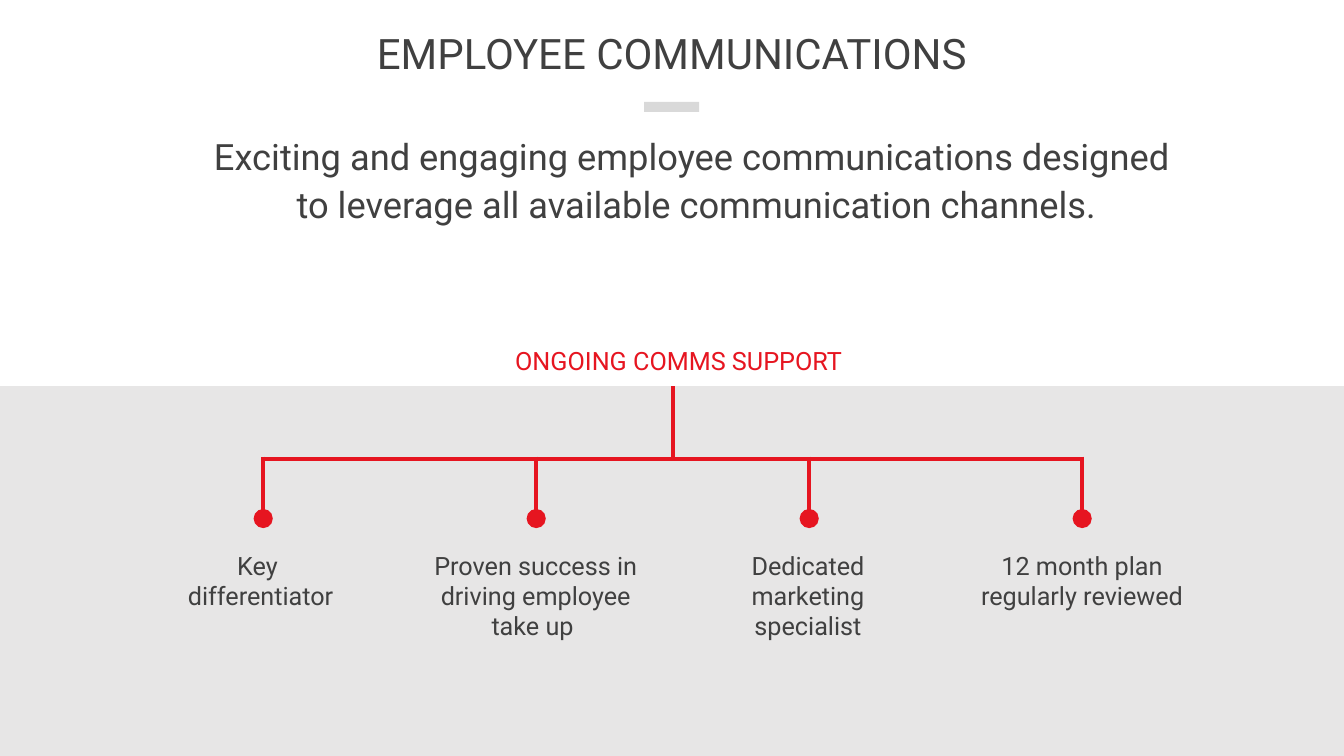
"""Build the employee communications slide."""
from lxml.etree import SubElement
from pptx import Presentation
from pptx.dml.color import RGBColor
from pptx.enum.shapes import MSO_CONNECTOR, MSO_SHAPE
from pptx.enum.text import MSO_ANCHOR, MSO_AUTO_SIZE, PP_ALIGN
from pptx.oxml.ns import qn
from pptx.util import Pt

RED = RGBColor(0xE6, 0x15, 0x20)
DARK = RGBColor(0x40, 0x40, 0x40)
PALE = RGBColor(0xE7, 0xE6, 0xE6)
GREY = RGBColor(0xD9, 0xD9, 0xD9)

FONT = "Roboto"
TITLE = {"line_spacing": 0.8, "space_before": Pt(0)}
BODY = {"line_spacing": 0.8, "space_before": Pt(10)}
BAND_TOP = 275.8
TRUNK_X = 481
BRANCH_Y = 327.6
DOT_Y = 370.4
DOT_SIZE = 13.7
FIRST_X, STEP_X = 188, 195
BRANCHES = [
    (103, 51, "Key \ndifferentiator"),
    (299.5, 73, "Proven success in driving employee take up "),
    (494, 73, "Dedicated marketing specialist"),
    (689.75, 51, "12 month plan regularly reviewed"),
]


def set_attrs(obj, values):
    """Set every attribute in values on obj."""
    for name, value in values.items():
        setattr(obj, name, value)


def place(sp, left, top, width, height):
    """Move and size a shape, in points."""
    set_attrs(sp, {"left": Pt(left), "top": Pt(top),
                   "width": Pt(width), "height": Pt(height)})


def write(sp, lines, size, color, para=None, anchor=MSO_ANCHOR.TOP):
    """Fill a text frame with centred paragraphs."""
    tf = sp.text_frame
    set_attrs(tf, {"word_wrap": True, "auto_size": MSO_AUTO_SIZE.NONE,
                   "vertical_anchor": anchor})
    for i, line in enumerate(lines):
        p = tf.add_paragraph() if i else tf.paragraphs[0]
        p.text = line
        set_attrs(p, {"alignment": PP_ALIGN.CENTER, **(para or {})})
        for r in p.runs:
            set_attrs(r.font, {"name": FONT, "size": Pt(size)})
            r.font.color.rgb = color


def clear_bullets(sp):
    """Remove bullets and indents from a placeholder."""
    for p in sp.text_frame.paragraphs:
        pPr = p._p.get_or_add_pPr()
        pPr.set("marL", "0")
        pPr.set("indent", "0")
        SubElement(pPr, qn("a:buNone"))


def add_label(slide, box, text, color):
    """Add a centred text box."""
    sp = slide.shapes.add_textbox(*map(Pt, box))
    write(sp, [text], 18, color)


def add_block(slide, kind, box, color):
    """Add a flat filled shape."""
    sp = slide.shapes.add_shape(kind, *map(Pt, box))
    sp.shadow.inherit = False
    sp.fill.solid()
    sp.fill.fore_color.rgb = color
    sp.line.fill.background()


def add_line(slide, *ends):
    """Add a red line between two points."""
    line = slide.shapes.add_connector(MSO_CONNECTOR.STRAIGHT, *map(Pt, ends))
    line.line.color.rgb = RED
    line.line.width = Pt(3)
    SubElement(line._element.spPr, qn("a:effectLst"))


def add_branch(slide, x, left, height, text):
    """Add a drop line with its dot and caption."""
    add_line(slide, x, BRANCH_Y - 1.5, x, DOT_Y - 6)
    corner = DOT_SIZE / 2
    add_block(slide, MSO_SHAPE.OVAL,
              (x - corner, DOT_Y - corner, DOT_SIZE, DOT_SIZE), RED)
    add_label(slide, (left, 389.5, 166.3, height), text, DARK)


def main():
    """Build and save the slide."""
    prs = Presentation()
    set_attrs(prs, {"slide_width": Pt(960), "slide_height": Pt(540)})
    slide = prs.slides.add_slide(prs.slide_layouts[1])

    title, body = slide.placeholders
    place(title, 0, 0, 960, 82)
    write(title, ["EMPLOYEE COMMUNICATIONS"], 30, DARK, TITLE,
          MSO_ANCHOR.MIDDLE)
    place(body, 103, 98, 789, 67.7)
    write(body, ["Exciting and engaging employee communications designed ",
                 "to leverage all available communication channels."],
          25.9, DARK, BODY)
    clear_bullets(body)

    add_block(slide, MSO_SHAPE.RECTANGLE, (460, 72.7, 39.5, 7.2), GREY)
    add_block(slide, MSO_SHAPE.RECTANGLE,
              (0, BAND_TOP, 960, 540 - BAND_TOP), PALE)
    add_label(slide, (334.8, 243.4, 300, 29), "ONGOING COMMS SUPPORT", RED)

    add_line(slide, TRUNK_X, BAND_TOP, TRUNK_X, BRANCH_Y + 1.5)
    last_x = FIRST_X + STEP_X * (len(BRANCHES) - 1)
    for end_x in (FIRST_X - 1, last_x + 1):
        add_line(slide, TRUNK_X, BRANCH_Y, end_x, BRANCH_Y)
    for i, branch in enumerate(BRANCHES):
        add_branch(slide, FIRST_X + STEP_X * i, *branch)

    prs.save("out.pptx")


if __name__ == "__main__":
    main()
